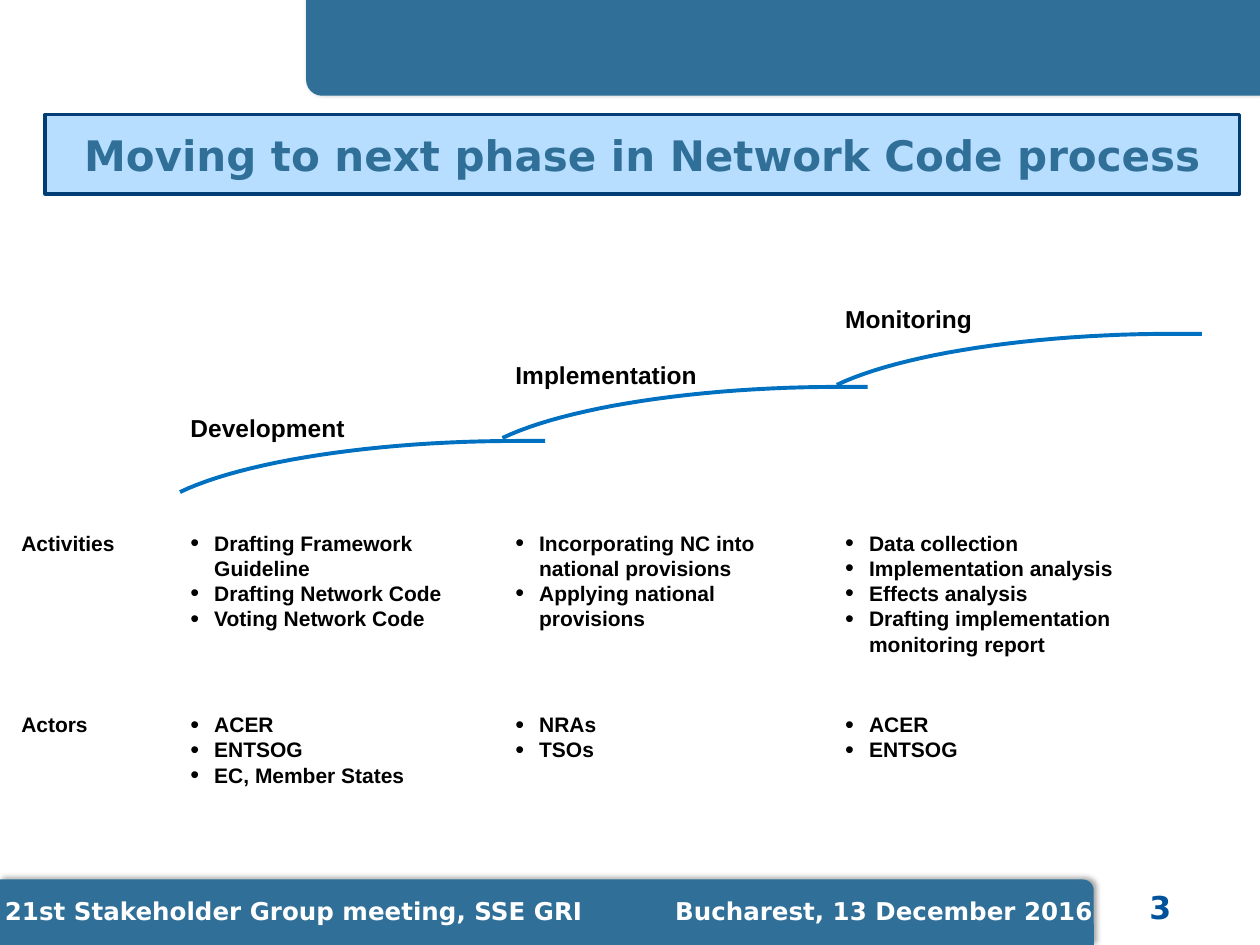
from lxml import etree
from pptx import Presentation
from pptx.dml.color import RGBColor
from pptx.enum.shapes import MSO_SHAPE
from pptx.enum.text import MSO_ANCHOR, MSO_AUTO_SIZE, PP_ALIGN
from pptx.oxml.ns import qn
from pptx.util import Cm, Pt

ROUND_ONE = MSO_SHAPE.ROUND_1_RECTANGLE
TOP, MIDDLE, BOTTOM = MSO_ANCHOR.TOP, MSO_ANCHOR.MIDDLE, MSO_ANCHOR.BOTTOM
LEFT, CENTER = PP_ALIGN.LEFT, PP_ALIGN.CENTER
FIT, NO_FIT = MSO_AUTO_SIZE.SHAPE_TO_FIT_TEXT, MSO_AUTO_SIZE.NONE

COLORS = {
    "band": "307098",
    "title_fill": "B8DEFF",
    "title_line": "003D74",
    "curve": "0070C0",
    "number": "00529B",
    "text": "000000",
    "white": "FFFFFF",
}
BODY, DISPLAY = "Arial", "DejaVu Sans"
CURVE_STEPS = 24

LABEL_X, COLUMN_WIDTH = 0.43, 6.25
ROWS = {"Activities": 10.69, "Actors": 14.35}
PHASES = [
    {
        "name": "Development", "x": 3.84, "name_y": 8.31, "curve": (3.63, 8.89),
        "Activities": ["Drafting Framework Guideline", "Drafting Network Code",
                       "Voting Network Code"],
        "Actors": ["ACER", "ENTSOG", "EC, Member States"],
    },
    {
        "name": "Implementation", "x": 10.39, "name_y": 7.26, "curve": (10.13, 7.8),
        "Activities": ["Incorporating NC into national provisions",
                       "Applying national provisions"],
        "Actors": ["NRAs", "TSOs"],
    },
    {
        "name": "Monitoring", "x": 17.04, "name_y": 6.12, "curve": (16.87, 6.73),
        "Activities": ["Data collection", "Implementation analysis", "Effects analysis",
                       "Drafting implementation monitoring report"],
        "Actors": ["ACER", "ENTSOG"],
    },
]


def color(name):
    return RGBColor.from_string(COLORS[name])


class SlideBuilder:
    def __init__(self, slide):
        self.slide = slide
        self.shapes = slide.shapes

    def style(self, frame, size, font, ink, align=LEFT):
        for paragraph in frame.paragraphs:
            paragraph.alignment = align
            for run in paragraph.runs:
                run.font.size = Pt(size)
                run.font.name = font
                run.font.bold = True
                run.font.color.rgb = color(ink)

    def band(self, x, y, width, height, rotation=0):
        band = self.shapes.add_shape(ROUND_ONE, Cm(x), Cm(y), Cm(width), Cm(height))
        band.rotation = rotation
        band.fill.solid()
        band.fill.fore_color.rgb = color("band")
        band.line.fill.background()
        band.shadow.inherit = False
        effects = band.element.spPr.find(qn("a:effectLst"))
        shadow = etree.SubElement(effects, qn("a:outerShdw"), blurRad=str(Pt(3.1)),
                                  dist=str(Pt(1.8)), dir=str(306 * 60000), rotWithShape="0")
        shade = etree.SubElement(shadow, qn("a:srgbClr"), val=COLORS["text"])
        etree.SubElement(shade, qn("a:alpha"), val="35000")

    def title(self, text, x, y, width, height):
        title = self.shapes.title
        title.left, title.top, title.width, title.height = Cm(x), Cm(y), Cm(width), Cm(height)
        outline = etree.SubElement(title.element.spPr, qn("a:prstGeom"), prst="roundRect")
        etree.SubElement(outline, qn("a:avLst"))
        title.fill.solid()
        title.fill.fore_color.rgb = color("title_fill")
        title.line.color.rgb = color("title_line")
        title.line.width = Pt(2)
        frame = title.text_frame
        frame.text = text
        frame.auto_size = NO_FIT
        frame.vertical_anchor = MIDDLE
        self.style(frame, 24, DISPLAY, "band", CENTER)

    def text(self, text, x, y, width, height, size=12, font=BODY, ink="text",
             align=LEFT, anchor=TOP, inset=True):
        box = self.shapes.add_textbox(Cm(x), Cm(y), Cm(width), Cm(height))
        frame = box.text_frame
        frame.text = text
        frame.word_wrap = True
        frame.auto_size = FIT
        frame.vertical_anchor = anchor
        if not inset:
            frame.margin_left = frame.margin_right = 0
            frame.margin_top = frame.margin_bottom = 0
        self.style(frame, size, font, ink, align)
        return frame

    def bullets(self, items, x, y):
        frame = self.text("\n".join(items), x, y, COLUMN_WIDTH, 0.51 * len(items), inset=False)
        for paragraph in frame.paragraphs:
            properties = paragraph._p.get_or_add_pPr()
            properties.set("marL", str(Cm(0.48)))
            properties.set("indent", str(-Cm(0.48)))
            etree.SubElement(properties, qn("a:buSzPct"), val="120000")
            etree.SubElement(properties, qn("a:buFont"), typeface=BODY)
            etree.SubElement(properties, qn("a:buChar"), char="•")

    def footer(self, event, place, x, y, width, height, tab):
        frame = self.text(f"{event}\t{place}", x, y, width, height, 14, DISPLAY, "white")
        properties = frame.paragraphs[0]._p.get_or_add_pPr()
        tabs = etree.SubElement(properties, qn("a:tabLst"))
        etree.SubElement(tabs, qn("a:tab"), pos=str(Cm(tab)), algn="l")

    def curve(self, x, y):
        rise = [(0, 1.03), (1.3, 0.41), (3.94, 0), (6.8, 0)]
        points = []
        for step in range(CURVE_STEPS + 1):
            t = step / CURVE_STEPS
            weights = [(1 - t) ** 3, 3 * t * (1 - t) ** 2, 3 * t ** 2 * (1 - t), t ** 3]
            dx, dy = (sum(w * p[axis] for w, p in zip(weights, rise)) for axis in (0, 1))
            points.append((Cm(x + dx), Cm(y + dy)))
        points.append((Cm(x + 7.36), Cm(y)))
        builder = self.shapes.build_freeform(*points[0])
        builder.add_line_segments(points[1:], close=False)
        curve = builder.convert_to_shape()
        curve.fill.background()
        curve.line.color.rgb = color("curve")
        curve.line.width = Pt(2.25)
        curve.shadow.inherit = False


def main():
    deck = Presentation()
    deck.slide_width, deck.slide_height = Cm(25.4), Cm(19.05)
    page = SlideBuilder(deck.slides.add_slide(deck.slide_layouts[5]))

    page.band(0, 17.73, 22.05, 1.32)
    page.band(6.17, 0, 19.23, 1.93, rotation=180)
    page.title("Moving to next phase in Network Code process", 0.91, 2.31, 24.08, 1.6)

    for row, y in ROWS.items():
        page.text(row, LABEL_X, y, 3, 0.51, inset=False)
    for phase in PHASES:
        page.text(phase["name"], phase["x"], phase["name_y"], COLUMN_WIDTH, 0.6,
                  size=14, anchor=BOTTOM, inset=False)
        page.curve(*phase["curve"])
        for row, y in ROWS.items():
            page.bullets(phase[row], phase["x"], y)

    page.footer("21st Stakeholder Group meeting, SSE GRI", "Bucharest, 13 December 2016",
                -0.15, 17.93, 22.86, 0.86, tab=13.51)
    page.text("3", 22.17, 17.78, 2.44, 1.02, 18, DISPLAY, "number", CENTER)
    deck.save("out.pptx")


if __name__ == "__main__":
    main()
